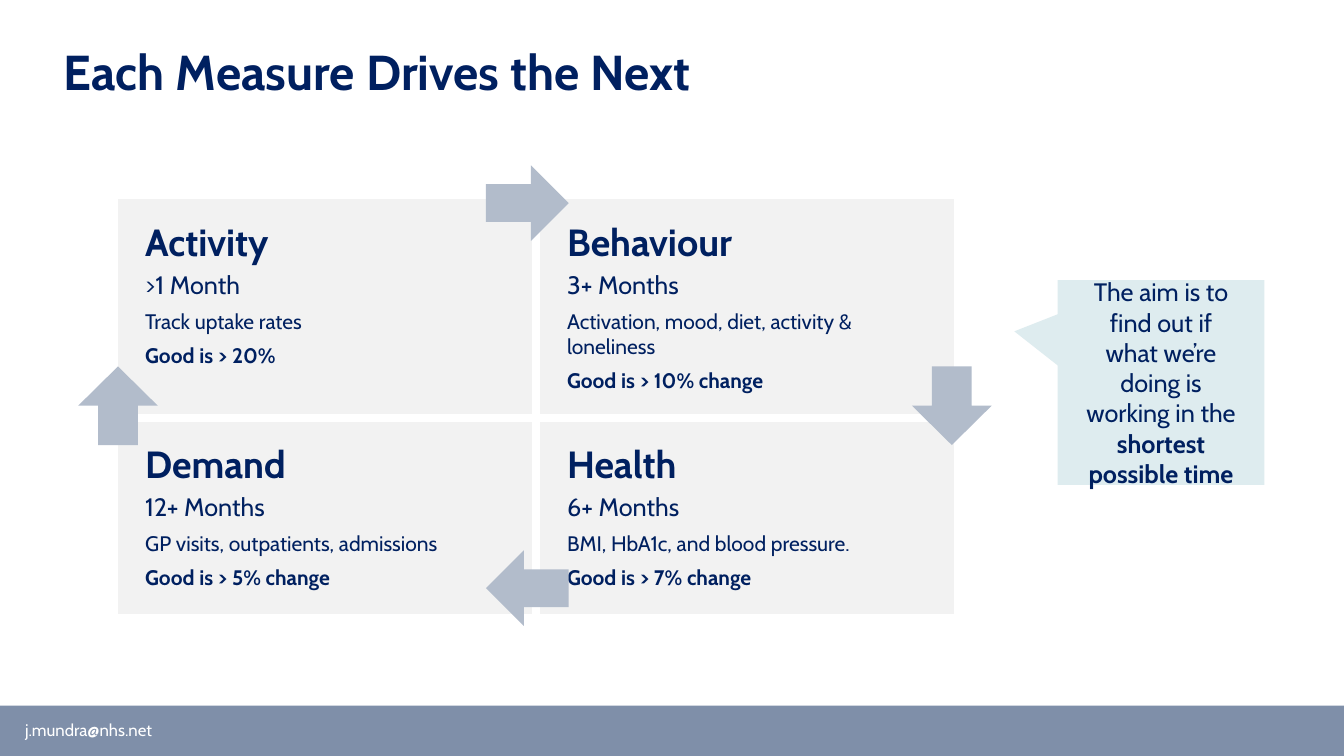
"""Build the slide showing how each measure drives the next."""
import pptx
import pptx.util
import pptx.dml.color
import pptx.enum.shapes
import pptx.enum.text
import pptx.oxml
import pptx.oxml.ns
from pptx.util import Inches

TITLE = "Each Measure Drives the Next"
EMAIL = "j.mundra@nhs.net"
AIM = [("The aim is to find out if what we’re doing is working in the ", False),
       ("shortest possible time", True)]
MEASURES = [
    [("Activity", ">1 Month", "Track uptake rates", "Good is > 20%"),
     ("Behaviour", "3+ Months", "Activation, mood, diet, activity & loneliness",
      "Good is > 10% change")],
    [("Demand", "12+ Months", "GP visits, outpatients, admissions", "Good is > 5% change"),
     ("Health", "6+ Months", "BMI, HbA1c, and blood pressure.", "Good is > 7% change")],
]
LINE_FORMATS = [
    dict(size=27, bold=True),
    dict(size=18, before=3),
    dict(size=15, before=6),
    dict(size=15, bold=True, before=6),
]
COLOURS = {"navy": "002060", "bar": "7F8FA9", "cell": "F2F2F2",
           "arrow": "B2BCCB", "callout": "DEECEF", "white": "FFFFFF"}
FONT = "Cabin"
GRID_LEFT, GRID_TOP, GRID_WIDTH, GRID_HEIGHT = 1.13, 1.94, 8.37, 3.95
ARROW_ACROSS, ARROW_DOWN = (0.82, 0.75), (0.78, 0.79)
CYCLE = [(4.82, 1.64, ARROW_ACROSS), (9.05, 3.63, ARROW_DOWN),
         (4.82, 5.46, ARROW_ACROSS), (0.78, 3.63, ARROW_DOWN)]
SHAPES = pptx.enum.shapes.MSO_SHAPE
ALIGN = pptx.enum.text.PP_ALIGN
MIDDLE = pptx.enum.text.MSO_ANCHOR.MIDDLE


def rgb(name):
    """Return the named colour."""
    return pptx.dml.color.RGBColor.from_string(COLOURS[name])


def write(paragraph, text, size=18, bold=False, colour="navy", before=0, align=ALIGN.LEFT):
    """Add a formatted run to a paragraph."""
    paragraph.alignment = align
    paragraph.space_before = pptx.util.Pt(before)
    run = paragraph.add_run()
    run.text = text
    run.font.name = FONT
    run.font.size = pptx.util.Pt(size)
    run.font.bold = bold
    run.font.color.rgb = rgb(colour)


def set_margins(holder, left, top, right, bottom):
    """Set the inner margins of a cell or text frame in inches."""
    holder.margin_left, holder.margin_top = Inches(left), Inches(top)
    holder.margin_right, holder.margin_bottom = Inches(right), Inches(bottom)


def add_block(slide, kind, left, top, width, height, colour):
    """Add a plain filled shape."""
    block = slide.shapes.add_shape(kind, Inches(left), Inches(top), Inches(width), Inches(height))
    block.shadow.inherit = False
    block.fill.solid()
    block.fill.fore_color.rgb = rgb(colour)
    block.line.fill.background()
    return block


def add_borders(cell):
    """Give a cell wide white borders."""
    properties = cell._tc.get_or_add_tcPr()
    for side in ("lnL", "lnR", "lnT", "lnB"):
        properties.append(pptx.oxml.parse_xml(
            f'<a:{side} {pptx.oxml.ns.nsdecls("a")} w="{pptx.util.Pt(6)}"><a:solidFill>'
            f'<a:srgbClr val="{COLOURS["white"]}"/></a:solidFill></a:{side}>'))


def add_measures(slide):
    """Add the two by two grid of measures."""
    grid = slide.shapes.add_table(len(MEASURES), len(MEASURES[0]), Inches(GRID_LEFT),
                                  Inches(GRID_TOP), Inches(GRID_WIDTH), Inches(GRID_HEIGHT)).table
    grid.first_row = grid.horz_banding = False
    for row, measures in enumerate(MEASURES):
        for column, lines in enumerate(measures):
            cell = grid.cell(row, column)
            add_borders(cell)
            cell.fill.solid()
            cell.fill.fore_color.rgb = rgb("cell")
            set_margins(cell, 0.31, 0.24, 0.24, 0.24)
            for index, (line, look) in enumerate(zip(lines, LINE_FORMATS)):
                frame = cell.text_frame
                write(frame.add_paragraph() if index else frame.paragraphs[0], line, **look)


def main():
    """Lay out and save the slide."""
    deck = pptx.Presentation()
    deck.slide_width, deck.slide_height = Inches(13.33), Inches(7.5)
    slide = deck.slides.add_slide(deck.slide_layouts[5])

    add_block(slide, SHAPES.RECTANGLE, 0, 7, 13.33, 0.5, "bar")

    title = slide.shapes.title
    title.left, title.top = Inches(0.53), Inches(0.36)
    title.width, title.height = Inches(9.34), Inches(0.69)
    title.text_frame.auto_size = pptx.enum.text.MSO_AUTO_SIZE.NONE
    title.text_frame.vertical_anchor = pptx.enum.text.MSO_ANCHOR.TOP
    write(title.text_frame.paragraphs[0], TITLE, size=35, bold=True)

    add_measures(slide)

    for step, (left, top, size) in enumerate(CYCLE):
        arrow = add_block(slide, SHAPES.RIGHT_ARROW, left, top, *size, "arrow")
        arrow.rotation = 90 * step

    contact = slide.shapes.add_textbox(Inches(0.15), Inches(7.08), Inches(7.44), Inches(0.32))
    contact.text_frame.word_wrap = True
    contact.text_frame.vertical_anchor = MIDDLE
    write(contact.text_frame.paragraphs[0], EMAIL, size=12, colour="white")

    callout = add_block(slide, SHAPES.RECTANGULAR_CALLOUT, 10.49, 2.78, 2.05, 2.03, "callout")
    callout.adjustments[0], callout.adjustments[1] = -0.71, -0.25
    aim = callout.text_frame
    aim.word_wrap = True
    aim.vertical_anchor = MIDDLE
    set_margins(aim, 0.24, 0.2, 0.24, 0.2)
    for text, bold in AIM:
        write(aim.paragraphs[0], text, bold=bold, align=ALIGN.CENTER)

    deck.save("out.pptx")


if __name__ == "__main__":
    main()
